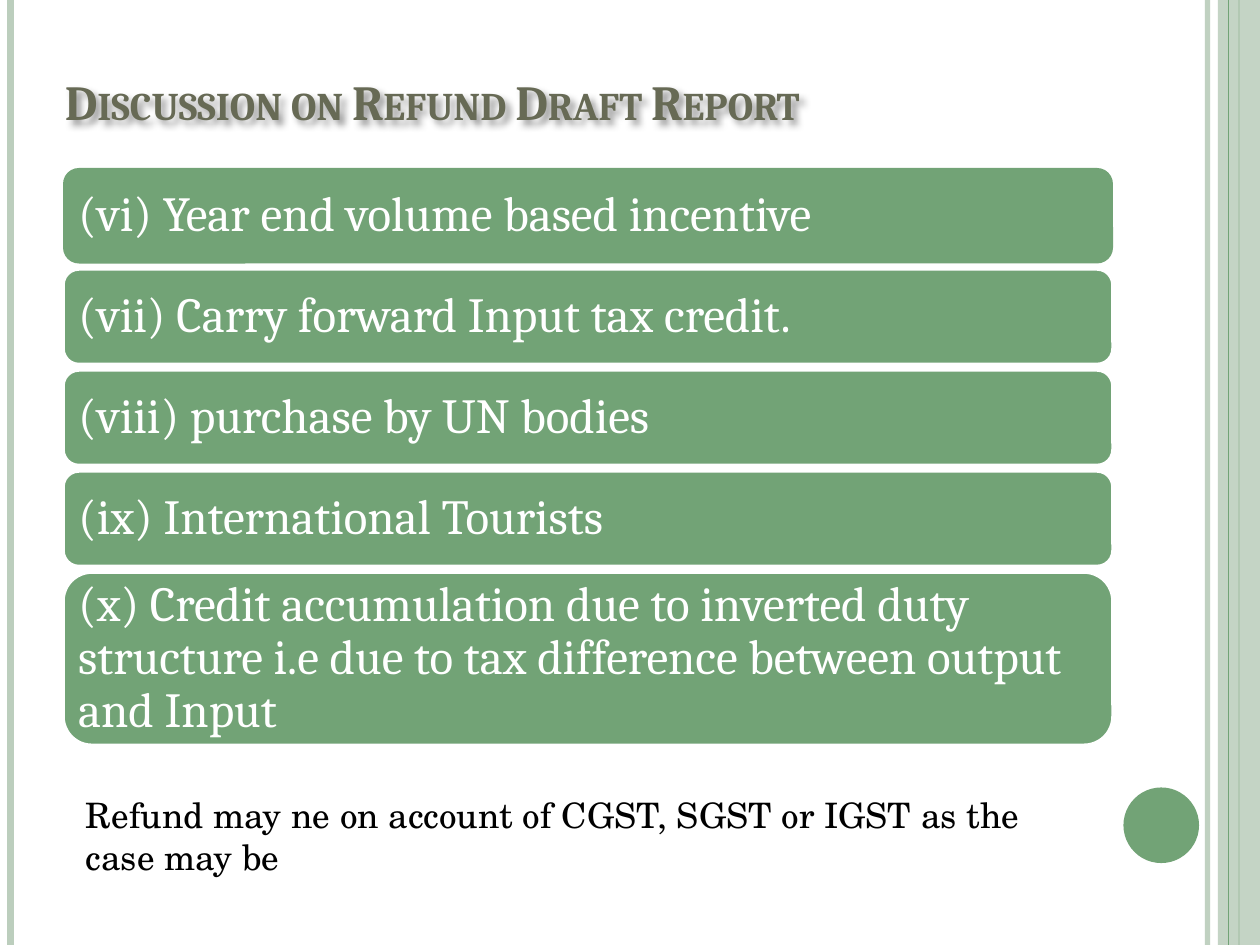
from lxml import etree
from pptx import Presentation
from pptx import util as u
from pptx.dml.color import RGBColor
from pptx.enum import shapes, text
from pptx.oxml.ns import qn

COLORS = {
    "green": "72A376",
    "pale": "BCCEBD",
    "olive": "676A55",
    "white": "FFFFFF",
    "black": "000000",
}
HEADING_FONT = "Cambria"
BODY_FONT = "TeX Gyre Schola"
COLUMNS, ROWS = 120, 90  # one grid cell is 1/12 inch
CORNER = 0.1667  # corner radius of a bar as a share of its height


class SlideBuilder:
    def __init__(self, presentation):
        self.slide = presentation.slides.add_slide(presentation.slide_layouts[6])
        self.column = presentation.slide_width / COLUMNS
        self.row = presentation.slide_height / ROWS

    def box(self, left, top, width, height):
        return (u.Emu(round(left * self.column)), u.Emu(round(top * self.row)),
                u.Emu(round(width * self.column)), u.Emu(round(height * self.row)))

    def color(self, name):
        return RGBColor.from_string(COLORS[name])

    def set_alpha(self, parent, percent):
        for color in parent.iter(qn("a:srgbClr")):
            etree.SubElement(color, qn("a:alpha"), val=str(percent * 1000))

    def vertical_line(self, column, color, width, alpha=100):
        x, top, _, height = self.box(column, 0, 0, ROWS)
        line = self.slide.shapes.add_connector(
            shapes.MSO_CONNECTOR.STRAIGHT, x, top, x, height)
        line.line.color.rgb = self.color(color)
        line.line.width = u.Pt(width)
        properties = line._element.spPr
        if alpha < 100:
            self.set_alpha(properties, alpha)
        etree.SubElement(properties, qn("a:effectLst"))

    def shape(self, kind, area, color, alpha=100, outline=None):
        shape = self.slide.shapes.add_shape(kind, *self.box(*area))
        shape.shadow.inherit = False
        shape.fill.solid()
        shape.fill.fore_color.rgb = self.color(color)
        if alpha < 100:
            self.set_alpha(shape._element.spPr, alpha)
        if outline:
            shape.line.color.rgb = self.color(outline)
            shape.line.width = u.Pt(2)
        else:
            shape.line.fill.background()
        return shape

    def add_text(self, shape, wording, font, size, color, anchor, bold=False):
        frame = shape.text_frame
        frame.word_wrap = True
        frame.vertical_anchor = anchor
        paragraph = frame.paragraphs[0]
        paragraph.text = wording
        paragraph.alignment = text.PP_ALIGN.LEFT
        paragraph.font.name = font
        paragraph.font.size = u.Pt(size)
        paragraph.font.bold = bold
        paragraph.font.color.rgb = self.color(color)
        return paragraph

    def text_box(self, area, *style, **options):
        shape = self.slide.shapes.add_textbox(*self.box(*area))
        return shape, self.add_text(shape, *style, **options)

    def title(self, area, wording):
        shape, paragraph = self.text_box(
            area, wording, HEADING_FONT, 28, "olive", text.MSO_ANCHOR.BOTTOM, bold=True)
        # Small capitals and a soft shadow
        paragraph.runs[0]._r.get_or_add_rPr().set("cap", "small")
        effects = etree.SubElement(shape._element.spPr, qn("a:effectLst"))
        shadow = etree.SubElement(effects, qn("a:outerShdw"), blurRad="50800",
                                  dist="38100", dir="2700000")
        color = etree.SubElement(shadow, qn("a:srgbClr"), val=COLORS["black"])
        etree.SubElement(color, qn("a:alpha"), val="40000")

    def bar(self, area, wording, outline):
        shape = self.shape(shapes.MSO_SHAPE.ROUNDED_RECTANGLE, area, "green",
                           outline=outline)
        # Rounded corners push text inwards, so the margin shrinks to match
        margin = u.Emu(round(u.Inches(0.12) - 0.29 * CORNER * shape.height))
        frame = shape.text_frame
        frame.margin_left = frame.margin_right = margin
        frame.margin_top = frame.margin_bottom = 0
        paragraph = self.add_text(shape, wording, HEADING_FONT, 28, "white",
                                  text.MSO_ANCHOR.MIDDLE)
        paragraph.line_spacing = 0.9


def main():
    presentation = Presentation()
    presentation.slide_width = u.Inches(10)
    presentation.slide_height = u.Inches(7.5)
    builder = SlideBuilder(presentation)

    # Side stripes and page circle
    builder.vertical_line(115, "pale", 3, alpha=93)
    builder.vertical_line(1, "pale", 4.5)
    builder.vertical_line(118, "green", 1.5)
    builder.shape(shapes.MSO_SHAPE.RECTANGLE, (116, 0, 4, ROWS), "pale", alpha=87)
    builder.vertical_line(117, "green", 0.75)
    builder.shape(shapes.MSO_SHAPE.OVAL, (107, 75, 7.2, 7.2), "green")

    # Title
    builder.title((5, 5, 98, 8), "Discussion on Refund Draft Report")

    # Refund cases, the last one taller
    cases = [
        "(vi) Year end volume based incentive",
        "(vii) Carry forward Input tax credit.",
        "(viii) purchase by UN bodies",
        "(ix) International Tourists",
        "(x) Credit accumulation due to inverted duty structure i.e due to "
        "tax difference between output and Input",
    ]
    for index, case in enumerate(cases):
        height = 16.5 if case is cases[-1] else 9.1
        builder.bar((6, 16 + 9.62 * index, 100, height), case,
                    outline="white" if index else None)

    # Closing remark
    builder.text_box((7, 75, 98, 9.2),
                     "Refund may ne on account of CGST, SGST or IGST as the case may be",
                     BODY_FONT, 20, "black", text.MSO_ANCHOR.TOP)

    presentation.save("out.pptx")


if __name__ == "__main__":
    main()
